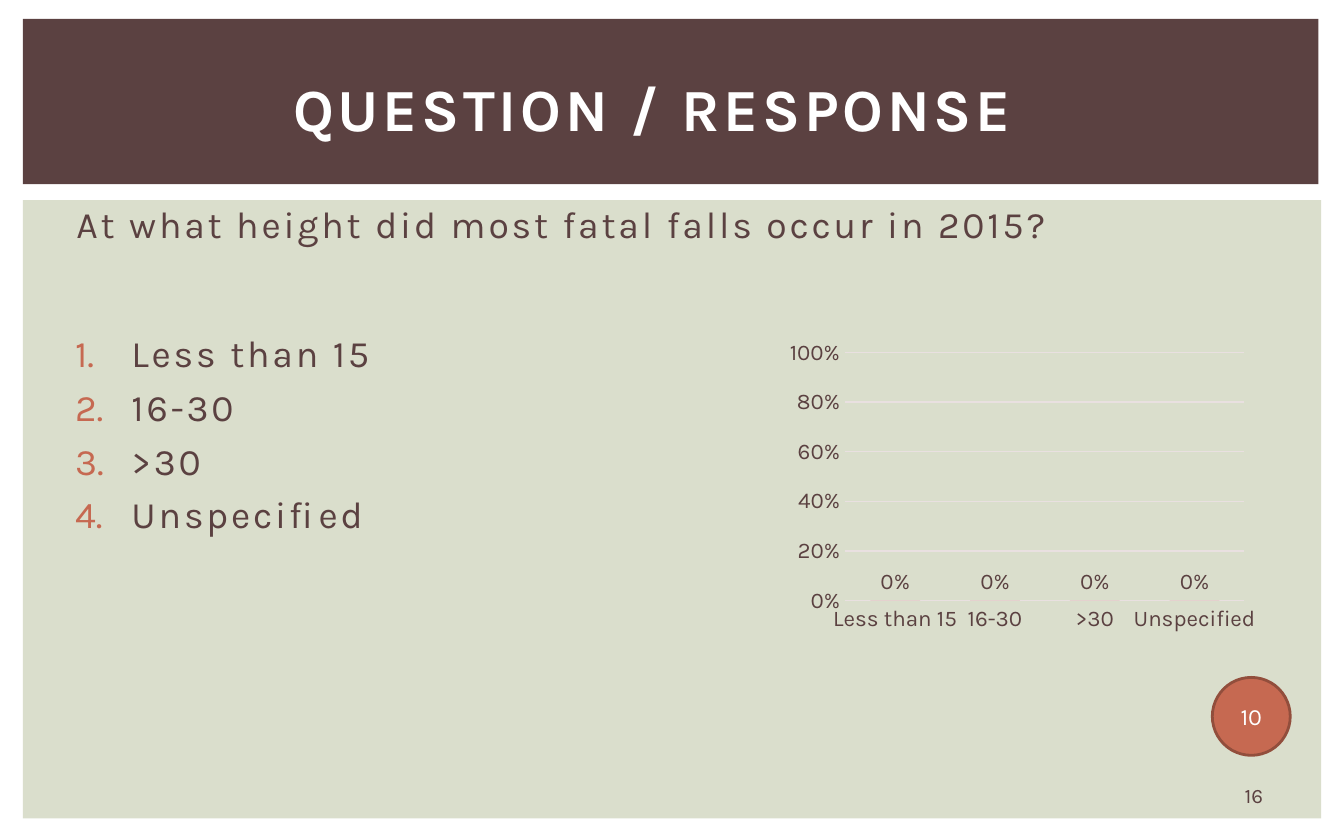
from lxml import etree
from pptx import Presentation
from pptx import util as u
from pptx.chart import data as chart_data
from pptx.dml import color
from pptx.enum import chart as ce
from pptx.enum import shapes, text
from pptx.oxml import ns

COLORS = {
    "sage": "DADECC", "brown": "5B4141", "white": "FFFFFF",
    "rust": "C66951", "rust_dark": "924E3C", "grid": "E9E0E0",
}
ANSWERS = ["Less than 15", "16-30", ">30", "Unspecified"]


def add_xml(parent, tag, **attributes):
    return etree.SubElement(parent, ns.qn(tag), attributes)


class SlideBuilder:
    font_name = "Karla"

    def __init__(self, page):
        self.page = page

    def rgb(self, name):
        return color.RGBColor.from_string(COLORS[name])

    def style_font(self, font, size, color_name="brown", bold=False):
        font.name = self.font_name
        font.size = u.Pt(size)
        font.bold = bold
        font.color.rgb = self.rgb(color_name)

    def shape(self, kind, area, fill, line=None):
        shape = self.page.shapes.add_shape(kind, *map(u.Inches, area))
        shape.shadow.inherit = False
        shape.fill.solid()
        shape.fill.fore_color.rgb = self.rgb(fill)
        if line:
            shape.line.color.rgb = self.rgb(line)
            shape.line.width = u.Pt(1.5)
        else:
            shape.line.fill.background()
        return shape

    def fill_text(self, frame, lines, size, color_name="brown", bold=False,
                  align=text.PP_ALIGN.LEFT, anchor=text.MSO_ANCHOR.TOP, spacing=0):
        frame.text = "\n".join(lines)
        frame.vertical_anchor = anchor
        for para in frame.paragraphs:
            para.alignment = align
            for span in para.runs:
                self.style_font(span.font, size, color_name, bold)
                if spacing:
                    span.font._element.set("spc", str(int(spacing * 100)))

    def text_box(self, area, lines, size, **style):
        box = self.page.shapes.add_textbox(*map(u.Inches, area))
        box.text_frame.word_wrap = True
        self.fill_text(box.text_frame, lines, size, **style)
        return box

    def body(self, area, lines, margin, indent=0.0, numbered=False):
        box = self.text_box(area, lines, 20, spacing=1.5)
        for para in box.text_frame.paragraphs:
            para.space_before = u.Pt(4.7)
            properties = para._p.get_or_add_pPr()
            properties.set("marL", str(u.Inches(margin)))
            properties.set("indent", str(u.Inches(indent)))
            if numbered:
                bullet_color = add_xml(properties, "a:buClr")
                add_xml(bullet_color, "a:srgbClr", val=COLORS["rust"])
                add_xml(properties, "a:buFont", typeface=self.font_name)
                add_xml(properties, "a:buAutoNum", type="arabicPeriod")

    def column_chart(self, area, categories, values, plot_area):
        data = chart_data.CategoryChartData(number_format="0%")
        data.categories = categories
        data.add_series("Series 1", values)
        chart = self.page.shapes.add_chart(
            ce.XL_CHART_TYPE.COLUMN_CLUSTERED, *map(u.Inches, area), data).chart
        chart.has_legend = False
        chart.has_title = False
        self.style_font(chart.font, 12)

        # Axes
        for axis in (chart.category_axis, chart.value_axis):
            axis.major_tick_mark = axis.minor_tick_mark = ce.XL_TICK_MARK.NONE
            self.style_font(axis.tick_labels.font, 12)
        values_axis = chart.value_axis
        values_axis.minimum_scale, values_axis.maximum_scale = 0, 1
        values_axis.major_unit = 0.2
        values_axis.tick_labels.number_format = "0%"
        values_axis.tick_labels.number_format_is_linked = False
        values_axis.format.line.fill.background()
        for line in (chart.category_axis.format.line,
                     values_axis.major_gridlines.format.line):
            line.color.rgb = self.rgb("grid")
            line.width = u.Pt(0.75)

        # Columns and their labels
        plot = chart.plots[0]
        plot.vary_by_categories = False
        plot.gap_width, plot.overlap = 100, -24
        fill = plot.series[0].format.fill
        fill.solid()
        fill.fore_color.rgb = self.rgb("rust")
        plot.has_data_labels = True
        labels = plot.data_labels
        labels.show_value = True
        labels.number_format = "0%"
        labels.number_format_is_linked = False
        labels.position = ce.XL_LABEL_POSITION.OUTSIDE_END
        self.style_font(labels.font, 12)

        # Fixed inner plot area
        plot_xml = chart._chartSpace.find(".//" + ns.qn("c:plotArea"))
        for old in plot_xml.findall(ns.qn("c:layout")):
            plot_xml.remove(old)
        layout = etree.Element(ns.qn("c:layout"))
        plot_xml.insert(0, layout)
        manual = add_xml(layout, "c:manualLayout")
        add_xml(manual, "c:layoutTarget", val="inner")
        for side in "xy":
            add_xml(manual, f"c:{side}Mode", val="edge")
        for side, value in zip("xywh", plot_area):
            add_xml(manual, f"c:{side}", val=str(value))


def main():
    deck = Presentation()
    deck.slide_width, deck.slide_height = u.Inches(10), u.Inches(6.25)
    page = deck.slides.add_slide(deck.slide_layouts[6])
    slide = SlideBuilder(page)
    centered = {"align": text.PP_ALIGN.CENTER, "anchor": text.MSO_ANCHOR.MIDDLE}

    # Background panels
    slide.shape(shapes.MSO_SHAPE.RECTANGLE, (0.17, 1.49, 9.66, 4.6), "sage")
    slide.shape(shapes.MSO_SHAPE.RECTANGLE, (0.17, 0.14, 9.64, 1.23), "brown")

    # Title, set slightly left of centre
    title = slide.text_box((0.42, 0.32, 9.17, 0.96), ["QUESTION / RESPONSE"], 32,
                           color_name="white", bold=True, spacing=2, **centered)
    title.text_frame.margin_right = u.Inches(0.4)

    # Slide number
    slide.text_box((9.01, 5.79, 0.64, 0.25), ["16"], 11, **centered)

    # Question and answers
    slide.body((0.42, 1.45, 9.17, 0.75),
               ["At what height did most fatal falls occur in 2015?"], 0.05)
    slide.body((0.42, 2.41, 4.48, 1.8), ANSWERS, 0.46, -0.42, numbered=True)

    # Response chart
    slide.column_chart((4.94, 2.41, 4.5, 3.55), ANSWERS, [0] * len(ANSWERS),
                       (0.3, 0.06, 0.66, 0.52))

    # Countdown badge
    badge = slide.shape(shapes.MSO_SHAPE.OVAL, (9.02, 5.04, 0.58, 0.58),
                        "rust", "rust_dark")
    frame = badge.text_frame
    frame.margin_left = frame.margin_right = 0
    frame.margin_top = frame.margin_bottom = 0
    frame.word_wrap = False
    slide.fill_text(frame, ["10"], 12.5, color_name="white", **centered)

    deck.save("out.pptx")


if __name__ == "__main__":
    main()
